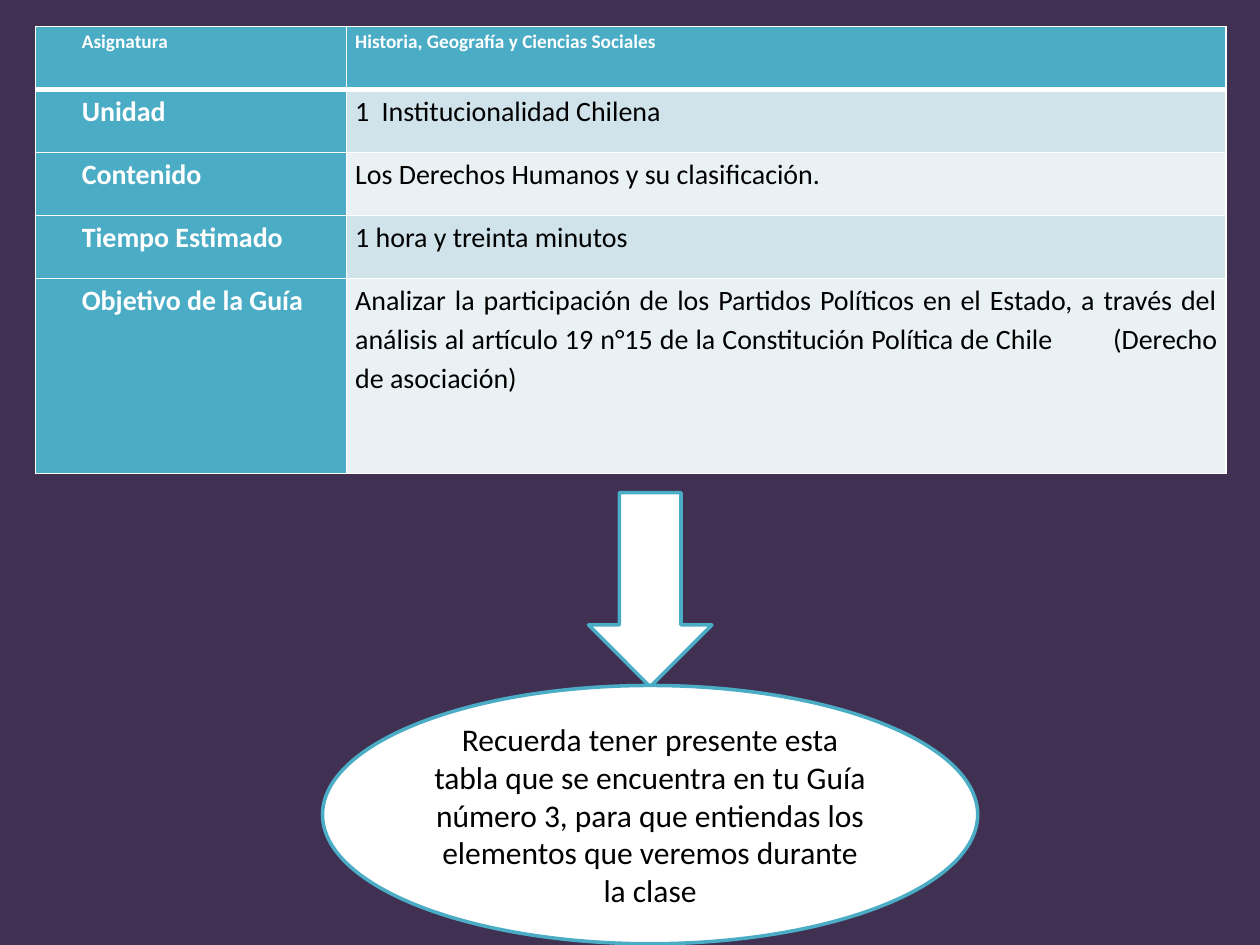
from lxml import etree
from pptx import Presentation
from pptx.dml.color import RGBColor
from pptx.enum.shapes import MSO_SHAPE
from pptx.enum.text import MSO_ANCHOR, PP_ALIGN
from pptx.oxml.ns import qn
from pptx.util import Inches, Pt

ARROW, ELLIPSE = MSO_SHAPE.DOWN_ARROW, MSO_SHAPE.OVAL
LEFT, CENTER, JUSTIFY = PP_ALIGN.LEFT, PP_ALIGN.CENTER, PP_ALIGN.JUSTIFY
FONT = "Calibri"
COLORS = {
    "background": "403152",
    "accent": "4BACC6",
    "band_dark": "D0E3EA",
    "band_light": "E9F1F5",
    "white": "FFFFFF",
    "black": "000000",
}

# label, content, tab stop in inches for the gap inside the content
ROWS = [
    ("Asignatura", "Historia, Geografía y Ciencias Sociales", None),
    ("Unidad", "1\tInstitucionalidad Chilena", 0.21),
    ("Contenido", "Los Derechos Humanos y su clasificación.", None),
    ("Tiempo Estimado", "1 hora y treinta minutos", None),
    ("Objetivo de la Guía",
     "Analizar la participación de los Partidos Políticos en el Estado, a través "
     "del análisis al artículo 19 n°15 de la Constitución Política de Chile\t"
     "(Derecho de asociación)", 5.95),
]
COL_WIDTHS = [2.47, 6.98]
ROW_HEIGHTS = [0.5] * 4 + [1.55]
REMINDER = ("Recuerda tener presente esta tabla que se encuentra en tu Guía número 3, "
            "para que entiendas los elementos que veremos durante la clase")


def rgb(name):
    return RGBColor.from_string(COLORS[name])


def add_run(p, text, size, color, bold=False):
    r = p.add_run()
    r.text = text
    r.font.name, r.font.size, r.font.bold = FONT, Pt(size), bold
    r.font.color.rgb = rgb(color)


def set_borders(cell, top, bottom):
    """White borders; top and bottom widths are in points."""
    tc_pr = cell._tc.get_or_add_tcPr()
    widths = [("a:lnL", 1), ("a:lnR", 1), ("a:lnT", top), ("a:lnB", bottom)]
    for i, (tag, width) in enumerate(widths):
        ln = etree.Element(qn(tag), w=str(Pt(width)))
        fill = etree.SubElement(ln, qn("a:solidFill"))
        etree.SubElement(fill, qn("a:srgbClr"), val=COLORS["white"])
        tc_pr.insert(i, ln)


def add_tab_stop(p, position):
    tabs = etree.SubElement(p._p.get_or_add_pPr(), qn("a:tabLst"))
    etree.SubElement(tabs, qn("a:tab"), pos=str(Inches(position)), algn="l")


def fill_cell(cell, row, col):
    header, label = row == 0, col == 0
    tab = None if label else ROWS[row][2]
    band = "band_dark" if row % 2 else "band_light"
    cell.fill.solid()
    cell.fill.fore_color.rgb = rgb("accent" if header or label else band)
    cell.margin_left = cell.margin_right = Inches(0.07)
    cell.margin_top = cell.margin_bottom = 0
    set_borders(cell, 3 if row == 1 else 1, 3 if header else 1)

    p = cell.text_frame.paragraphs[0]
    p.line_spacing = 1.15
    p.alignment = JUSTIFY if row == len(ROWS) - 1 and not label else LEFT
    if label:
        p._p.get_or_add_pPr().set("indent", str(Inches(0.3)))
    if tab:
        add_tab_stop(p, tab)
    strong = header or label
    add_run(p, ROWS[row][col], 11 if header else 16,
            "white" if strong else "black", strong)


def add_guide_table(slide, x, y):
    table = slide.shapes.add_table(
        len(ROWS), len(COL_WIDTHS), Inches(x), Inches(y),
        Inches(sum(COL_WIDTHS)), Inches(sum(ROW_HEIGHTS))).table
    for column, width in zip(table.columns, COL_WIDTHS):
        column.width = Inches(width)
    for row, height in enumerate(ROW_HEIGHTS):
        table.rows[row].height = Inches(height)
        for col in range(len(COL_WIDTHS)):
            fill_cell(table.cell(row, col), row, col)


def add_outlined(slide, kind, x, y, w, h):
    sp = slide.shapes.add_shape(kind, Inches(x), Inches(y), Inches(w), Inches(h))
    sp.shadow.inherit = False
    sp.fill.solid()
    sp.fill.fore_color.rgb = rgb("white")
    sp.line.color.rgb = rgb("accent")
    sp.line.width = Pt(2)
    return sp


def add_reminder(slide, x, y, w, h):
    """Arrow pointing down to an ellipse centred below it."""
    arrow_w, arrow_h, ellipse_h = 0.98, 1.54, 2.05
    add_outlined(slide, ARROW, x + (w - arrow_w) / 2, y, arrow_w, arrow_h)
    sp = add_outlined(slide, ELLIPSE, x, y + h - ellipse_h, w, ellipse_h)
    tf = sp.text_frame
    tf.word_wrap = True
    tf.vertical_anchor = MSO_ANCHOR.MIDDLE
    p = tf.paragraphs[0]
    p.alignment = CENTER
    add_run(p, REMINDER, 18, "black")


def main():
    prs = Presentation()
    prs.slide_width, prs.slide_height = Inches(10), Inches(7.5)
    slide = prs.slides.add_slide(prs.slide_layouts[6])
    slide.background.fill.solid()
    slide.background.fill.fore_color.rgb = rgb("background")
    add_guide_table(slide, 0.28, 0.21)
    add_reminder(slide, 2.56, 3.91, 5.2, 3.58)
    prs.save("out.pptx")


if __name__ == "__main__":
    main()
